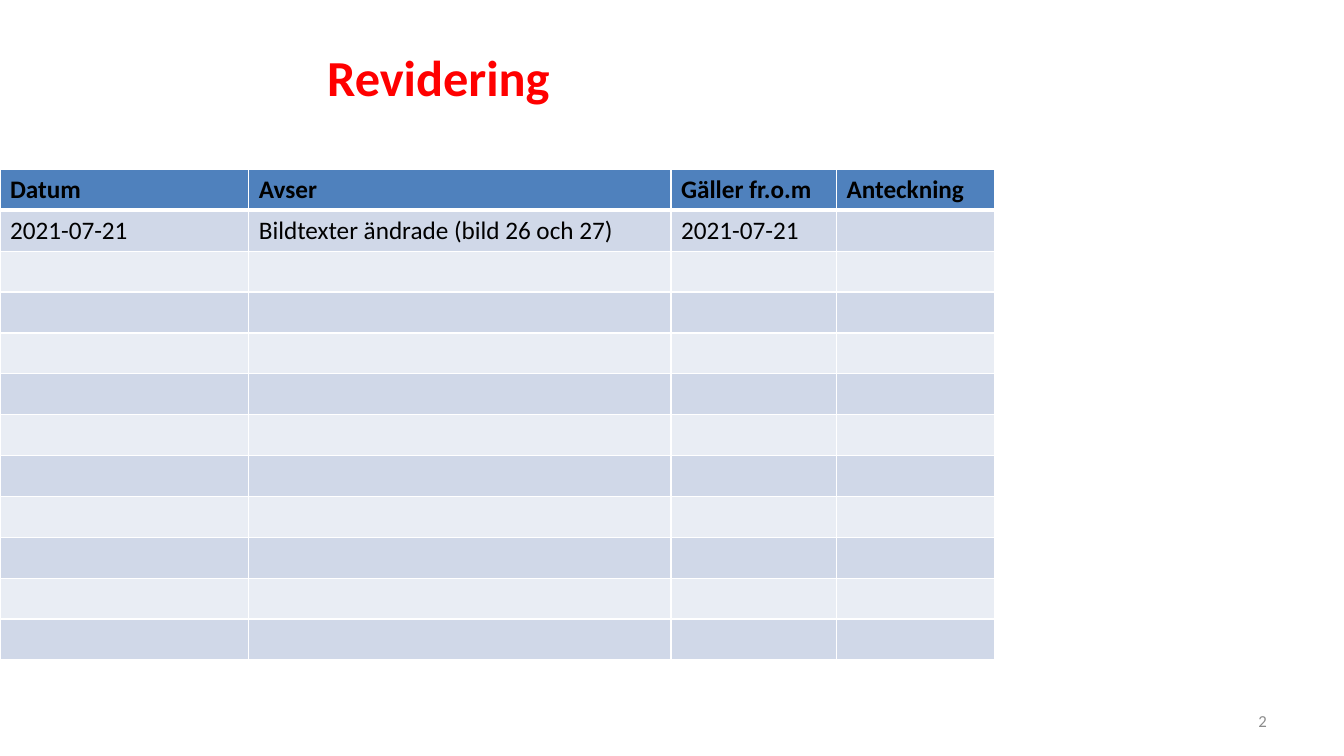
from lxml.etree import SubElement as Sub
from pptx import Presentation
from pptx.dml.color import RGBColor
from pptx.enum.text import MSO_ANCHOR as Anchor, PP_ALIGN as Align
from pptx.oxml.ns import qn
from pptx.util import Cm, Pt

HEAD = ["Datum", "Avser", "Gäller fr.o.m", "Anteckning"]
ENTRY = ["2021-07-21", "Bildtexter ändrade (bild 26 och 27)", "2021-07-21", ""]
ROWS = 12
COLS = [6.27, 10.64, 4.17, 3.99]
HIGH = 1.03
BLUE, DARK, LIGHT = "4F81BD", "D0D8E8", "E9EDF4"


def rgb(code):
    return RGBColor.from_string(code)


def write(frame, text, size=18, color="000000", bold=False,
          align=Align.LEFT, anchor=Anchor.TOP):
    frame.word_wrap = True
    frame.vertical_anchor = anchor
    par = frame.paragraphs[0]
    par.alignment = align
    if text:
        par.add_run().text = text
    for font in [par.font] + [run.font for run in par.runs]:
        font.name, font.size, font.bold = "Calibri", Pt(size), bold
        font.color.rgb = rgb(color)


def edge(cell, side, width):
    """Draw one white border; side is L, R, T or B, called in that order."""
    line = Sub(cell._tc.get_or_add_tcPr(), qn("a:ln" + side), w=str(Pt(width)))
    Sub(Sub(line, qn("a:solidFill")), qn("a:srgbClr"), val="FFFFFF")


def title(slide, box):
    shape = slide.shapes.title
    shape.left, shape.top, shape.width, shape.height = map(Cm, box)
    write(shape.text_frame, "Revidering", size=36, color="FF0000",
          bold=True, align=Align.CENTER)


def log(slide, left, top):
    table = slide.shapes.add_table(ROWS, len(COLS), Cm(left), Cm(top),
                                   Cm(sum(COLS)), Cm(HIGH * ROWS)).table
    for col, width in zip(table.columns, COLS):
        col.width = Cm(width)
    texts = [HEAD, ENTRY] + [[""] * len(COLS)] * (ROWS - 2)
    for i, (row, line) in enumerate(zip(table.rows, texts)):
        row.height = Cm(HIGH)
        fill = BLUE if i == 0 else DARK if i % 2 else LIGHT
        for cell, text in zip(row.cells, line):
            edge(cell, "L", 1)
            edge(cell, "R", 1)
            edge(cell, "T", 3 if i == 1 else 1)
            edge(cell, "B", 3 if i == 0 else 1)
            cell.fill.solid()
            cell.fill.fore_color.rgb = rgb(fill)
            write(cell.text_frame, text, bold=i == 0)


def number(slide, box):
    shape = slide.shapes.add_textbox(*map(Cm, box))
    write(shape.text_frame, "2", size=12, color="8C8C8C",
          align=Align.RIGHT, anchor=Anchor.MIDDLE)


def main():
    deck = Presentation()
    deck.slide_width, deck.slide_height = Cm(33.87), Cm(19.05)
    slide = deck.slides.add_slide(deck.slide_layouts[5])
    log(slide, 0, 4.27)
    title(slide, (3.53, 1.04, 15.04, 1.8))
    number(slide, (24.28, 17.65, 7.9, 1.02))
    deck.save("out.pptx")


if __name__ == "__main__":
    main()
